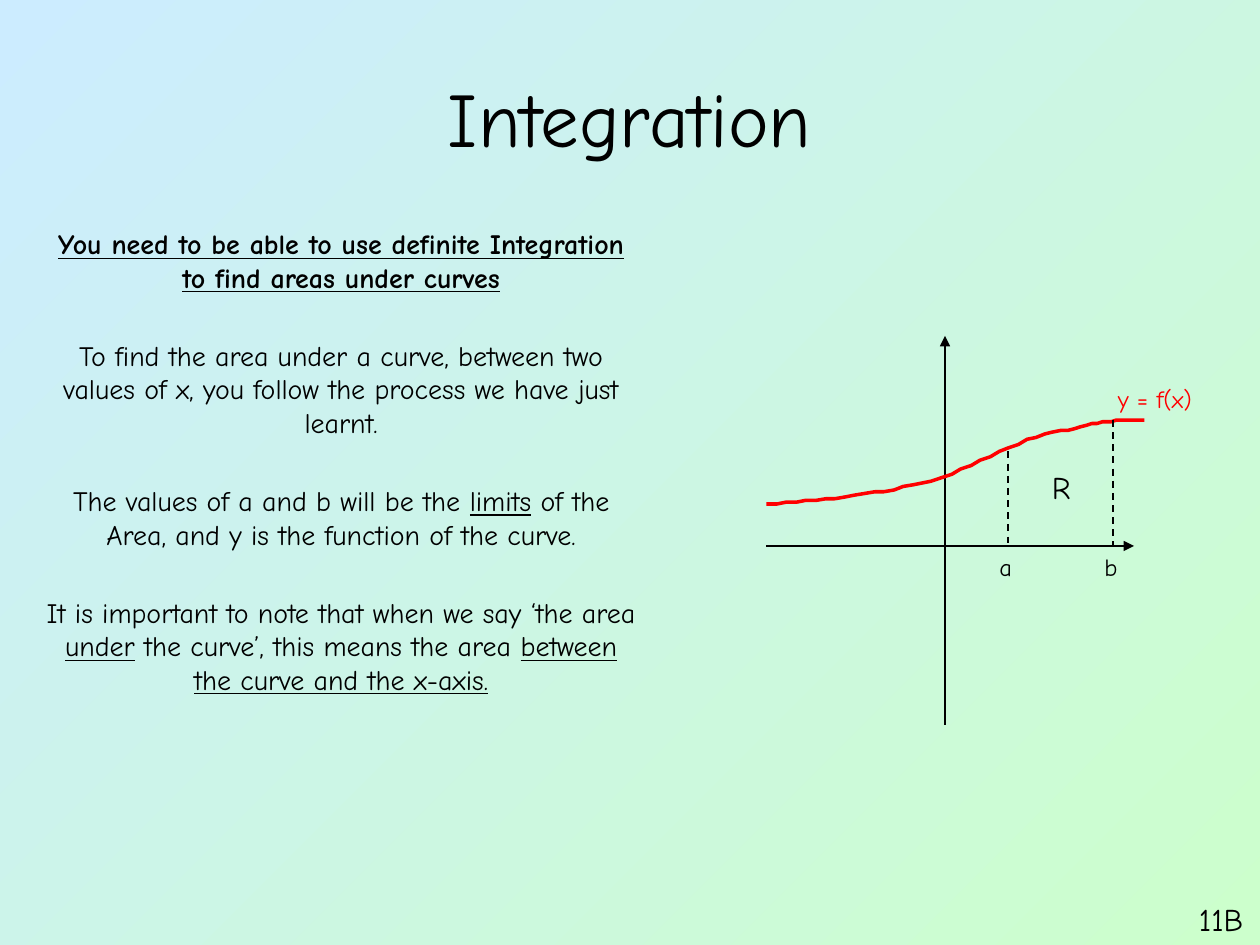
"""Build the slide on integration and the area under a curve."""
from pptx import Presentation
from pptx.dml.color import RGBColor
from pptx.enum.dml import MSO_LINE_DASH_STYLE as Dash
from pptx.enum.shapes import MSO_CONNECTOR as Link
from pptx.enum.text import MSO_ANCHOR as Anchor, PP_ALIGN as Align
from pptx.oxml.ns import qn
from pptx.util import Pt
from lxml.etree import SubElement

BLACK = RGBColor(0x00, 0x00, 0x00)
RED = RGBColor(0xFF, 0x00, 0x00)
BLUE = RGBColor(0xCC, 0xEC, 0xFF)
GREEN = RGBColor(0xCC, 0xFF, 0xCC)
FONT = "Comic Neue"

deck = Presentation()
deck.slide_width, deck.slide_height = Pt(720), Pt(540)
slide = deck.slides.add_slide(deck.slide_layouts[6])
shapes = slide.shapes

back = slide.background.fill
back.gradient()
back.gradient_angle = 315
for stop, color in zip(back.gradient_stops, (BLUE, GREEN)):
    stop.color.rgb = color


def add_text(box, paras, size, color=BLACK, align=Align.CENTER, anchor=Anchor.TOP, gap=0):
    frame = shapes.add_textbox(*map(Pt, box)).text_frame
    frame.word_wrap = True
    frame.vertical_anchor = anchor
    for i, runs in enumerate(paras):
        para = frame.add_paragraph() if i else frame.paragraphs[0]
        para.alignment = align
        para.space_before = Pt(gap if i else 0)
        for text, form in runs:
            run = para.add_run()
            run.text = text
            run.font.color.rgb = color
            for key, value in {"name": FONT, "size": Pt(size), **form}.items():
                setattr(run.font, key, value)


def add_line(start, end, width, dash=None, arrow=False):
    link = shapes.add_connector(Link.STRAIGHT, *map(Pt, start + end))
    form = {"width": Pt(width), "dash_style": dash}
    for key, value in form.items():
        setattr(link.line, key, value)
    link.line.color.rgb = BLACK
    if arrow:
        SubElement(link.line._get_or_add_ln(), qn("a:tailEnd"), type="triangle")
    SubElement(link._element.spPr, qn("a:effectLst"))


under = {"underline": True}
head = {"bold": True, "underline": True}
body = [
    [("You need to be able to use definite Integration to find areas under curves", head)],
    [("To find the area under a curve, between two values of x, "
      "you follow the process we have just learnt.", {})],
    [("The values of a and b will be the ", {}), ("limits", under),
     (" of the Area, and y is the function of the curve.", {})],
    [("It is important to note that when we say ‘the area ", {}), ("under", under),
     (" the curve’, this means the area ", {}),
     ("between the curve and the x-axis.", under)],
]
add_text((36, 21.6, 648, 90), [[("Integration", {})]], 44, anchor=Anchor.MIDDLE)
add_text((18, 126, 354, 356), body, 16, gap=25.4)

add_line((540, 414), (540, 192), 0.75, arrow=True)
add_line((438, 312), (648, 312), 0.75, arrow=True)

knots = [(438, 288), (468, 286), (498, 283), (527, 276), (556, 269),
         (588, 246), (610, 246 - 0.2), (631, 240), (642, 240), (654, 240)]
steps = 16
points = []
for i in range(0, len(knots) - 1, 3):
    for n in range(1, steps + 1):
        t = n / steps
        parts = ((1 - t) ** 3, 3 * t * (1 - t) ** 2, 3 * t * t * (1 - t), t ** 3)
        points.append([sum(w * k[axis] for w, k in zip(parts, knots[i:i + 4]))
                       for axis in (0, 1)])
pen = shapes.build_freeform(*knots[0], scale=Pt(1))
pen.add_line_segments(points, close=False)
curve = pen.convert_to_shape()
curve.shadow.inherit = False
curve.fill.background()
curve.line.color.rgb = RED
curve.line.width = Pt(2)

for x, top in ((576, 258), (636, 240)):
    add_line((x, top), (x, 312), 1, dash=Dash.DASH)

add_text((624, 216, 72, 24), [[("y = f(x)", {})]], 14, RED)
for text, box, size in (
    ("a", (564, 312, 24, 24), 14),
    ("b", (624, 312, 24, 24), 14),
    ("R", (594, 264, 26, 29), 18),
    ("11B", (678, 511, 42, 29), 18),
):
    add_text(box, [[(text, {})]], size, align=Align.LEFT)

deck.save("out.pptx")
